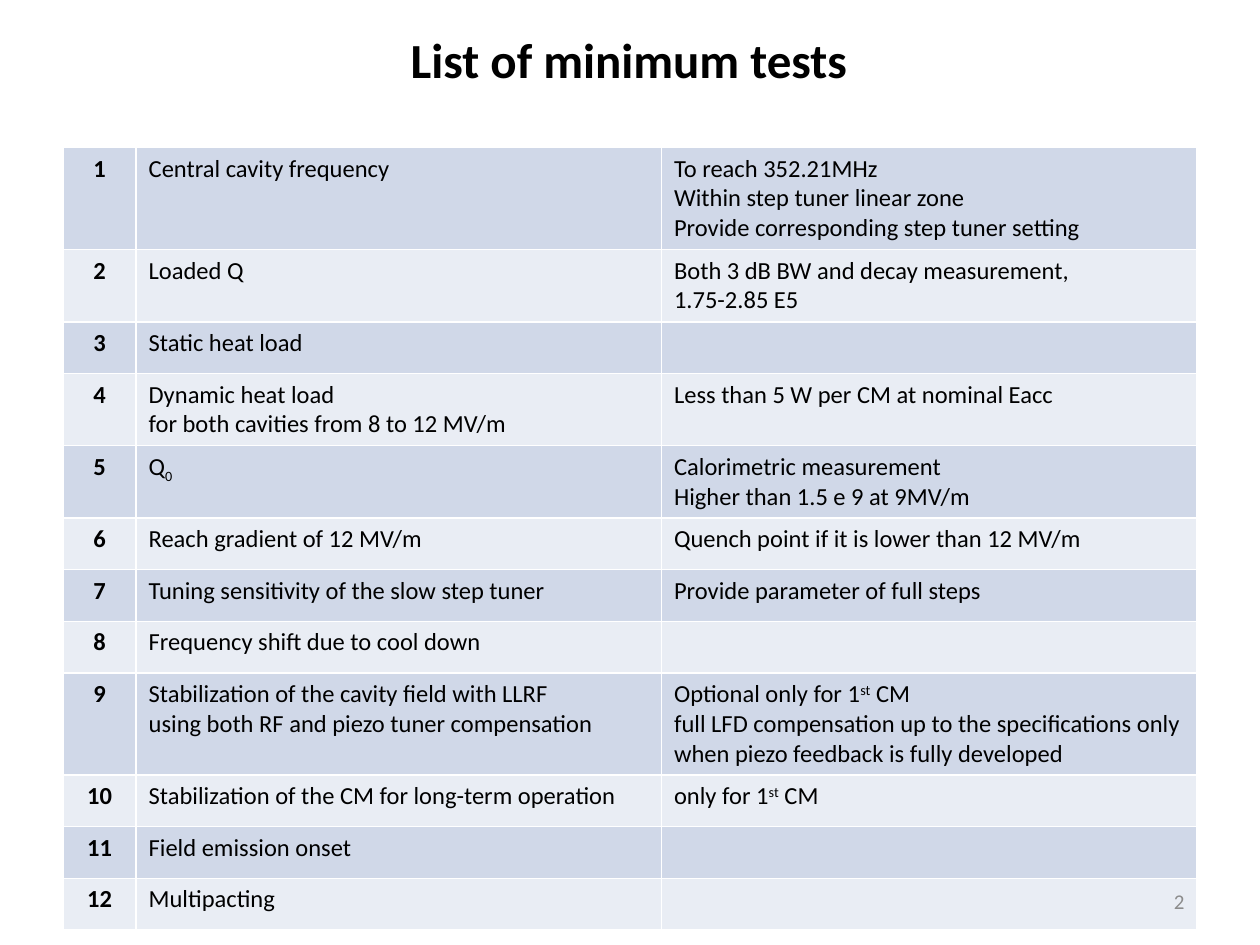
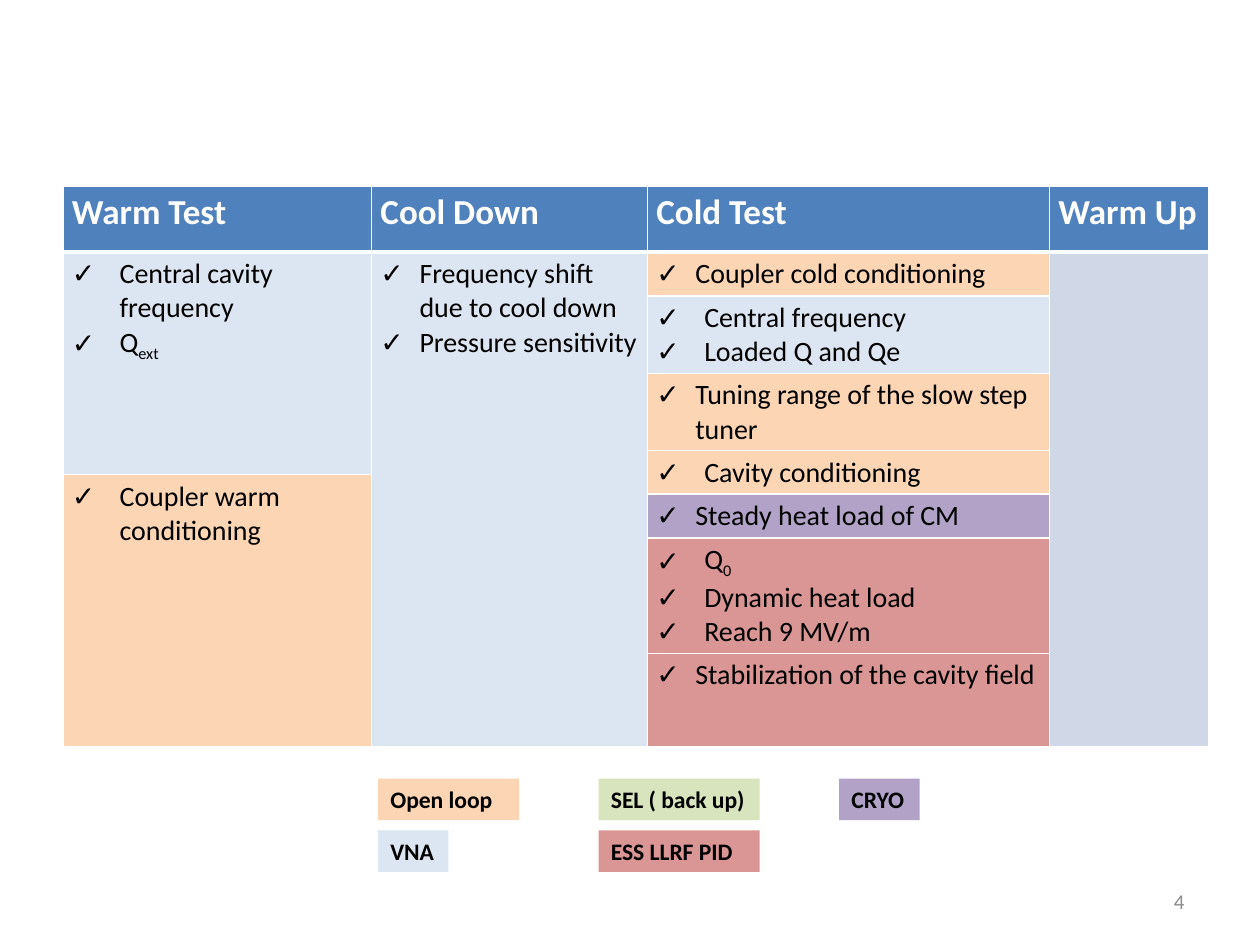
import lxml.etree as etree
import pptx
import pptx.dml.color
import pptx.enum.shapes
import pptx.enum.text
import pptx.oxml.ns
import pptx.util

Inches = pptx.util.Inches
Pt = pptx.util.Pt
RGBColor = pptx.dml.color.RGBColor
ALIGN = pptx.enum.text.PP_ALIGN
MIDDLE = pptx.enum.text.MSO_ANCHOR.MIDDLE
qn = pptx.oxml.ns.qn

BLACK = RGBColor(0x00, 0x00, 0x00)
WHITE = RGBColor(0xFF, 0xFF, 0xFF)
GREY = RGBColor(0x8C, 0x8C, 0x8C)
HEADER_BLUE = RGBColor(0x4F, 0x81, 0xBD)
BAND_DARK = RGBColor(0xD0, 0xD8, 0xE8)
BAND_LIGHT = RGBColor(0xE9, 0xED, 0xF4)
VNA_BLUE = RGBColor(0xDC, 0xE6, 0xF2)
LOOP_ORANGE = RGBColor(0xFC, 0xD5, 0xB5)
SEL_GREEN = RGBColor(0xD7, 0xE4, 0xBD)
LLRF_RED = RGBColor(0xD9, 0x96, 0x94)
CRYO_PURPLE = RGBColor(0xB3, 0xA2, 0xC7)

FONT = "Calibri"
TITLE = {"size": Pt(28), "bold": True}
NUMBER = {"size": Pt(12), "bold": False}
TEST = {"size": Pt(14), "bold": False}
TEST_ID = {"size": Pt(14), "bold": True}
PHASE = {"size": Pt(20), "bold": True}
STEP = {"size": Pt(16), "bold": False}
LEGEND = {"size": Pt(13.5), "bold": True}

SUB, SUPER = -25, 30
Q_ZERO = [("Q", 0), ("0", SUB)]
Q_EXT = [("Q", 0), ("ext", SUB)]

# Test name, then the lines of its requirement
TESTS = [
    ("Central cavity frequency",
     ["To reach 352.21MHz", "Within step tuner linear zone",
      "Provide corresponding step tuner setting"]),
    ("Loaded Q", ["Both 3 dB BW and decay measurement,", "1.75-2.85 E5"]),
    ("Static heat load", []),
    ("Dynamic heat load\nfor both cavities from 8 to 12 MV/m",
     ["Less than 5 W per CM at nominal Eacc"]),
    (Q_ZERO, ["Calorimetric measurement", "Higher than 1.5 e 9 at 9MV/m"]),
    ("Reach gradient of 12 MV/m",
     ["Quench point if it is lower than 12 MV/m"]),
    ("Tuning sensitivity of the slow step tuner",
     ["Provide parameter of full steps"]),
    ("Frequency shift due to cool down", []),
    ("Stabilization of the cavity field with LLRF \n"
     "using both RF and piezo tuner compensation",
     [[("Optional only for 1", 0), ("st", SUPER), (" CM", 0)],
      "full LFD compensation up to the specifications only "
      "when piezo feedback is fully developed"]),
    ("Stabilization of the CM for long-term operation",
     [[("only for 1", 0), ("st", SUPER), (" CM", 0)]]),
    ("Field emission onset", []),
    ("Multipacting", []),
]

PHASES = ["Warm Test", "Cool Down", "Cold Test", "Warm Up"]
NARROW, WIDE = 0.31, 0.38
# Row, column, rows spanned, fill, bullet indent, lines
STEPS = [
    (1, 0, 4, VNA_BLUE, WIDE, ["Central cavity frequency", Q_EXT]),
    (5, 0, 4, LOOP_ORANGE, WIDE, ["Coupler warm conditioning"]),
    (1, 1, 8, VNA_BLUE, NARROW,
     ["Frequency shift due to cool down", "Pressure sensitivity"]),
    (1, 2, 1, LOOP_ORANGE, NARROW, ["Coupler cold conditioning"]),
    (2, 2, 1, VNA_BLUE, WIDE, ["Central frequency", "Loaded Q and Qe"]),
    (3, 2, 1, LOOP_ORANGE, NARROW, ["Tuning range of the slow step tuner"]),
    (4, 2, 2, LOOP_ORANGE, WIDE, ["Cavity conditioning"]),
    (6, 2, 1, CRYO_PURPLE, NARROW, ["Steady heat load of CM"]),
    (7, 2, 1, LLRF_RED, WIDE, [Q_ZERO, "Dynamic heat load", "Reach 9 MV/m"]),
    (8, 2, 1, LLRF_RED, NARROW, ["Stabilization of the cavity field"]),
    (1, 3, 8, BAND_DARK, NARROW, []),
]

LEGEND_ROWS = [6.18, 6.59]
# Left, row, width, fill, label
LEGEND_KEYS = [
    (3, 0, 1.12, LOOP_ORANGE, "Open loop"),
    (3, 1, 0.56, VNA_BLUE, "VNA"),
    (4.75, 0, 1.28, SEL_GREEN, "SEL ( back up)"),
    (4.75, 1, 1.28, LLRF_RED, "ESS LLRF PID"),
    (6.66, 0, 0.64, CRYO_PURPLE, "CRYO"),
]


def add_span(para, text, style, color, baseline=0):
    """Add text to a paragraph, with a line break at each newline."""
    for index, part in enumerate(text.split("\n")):
        if index:
            para.add_line_break()
            size = str(int(style["size"].pt * 100))
            etree.SubElement(para._p[-1], qn("a:rPr"), sz=size)
        span = para.add_run()
        span.text = part
        span.font.name = FONT
        span.font.color.rgb = color
        for name, value in style.items():
            setattr(span.font, name, value)
        if baseline:
            span._r.get_or_add_rPr().set("baseline", str(baseline * 1000))


def add_tick(para, indent):
    props = para._p.get_or_add_pPr()
    props.set("marL", str(Inches(indent)))
    props.set("indent", str(-Inches(indent)))
    etree.SubElement(props, qn("a:buFont"), typeface="Arial")
    etree.SubElement(props, qn("a:buChar"), char="✓")


def write_lines(frame, lines, style, color=BLACK, align=ALIGN.LEFT, indent=0):
    """Write one paragraph a line; a line is a string or (text, baseline) pairs."""
    for index, line in enumerate(lines):
        para = frame.add_paragraph() if index else frame.paragraphs[0]
        para.alignment = align
        if indent:
            add_tick(para, indent)
        spans = [(line, 0)] if isinstance(line, str) else line
        for text, baseline in spans:
            add_span(para, text, style, color, baseline)


def add_grid(page, left, top, widths, heights):
    """Add a plain table with the given column widths and row heights."""
    frame = page.shapes.add_table(
        len(heights), len(widths), Inches(left), Inches(top),
        Inches(sum(widths)), Inches(sum(heights)))
    table = frame.table
    table.first_row = table.horz_banding = False
    for column, width in zip(table.columns, widths):
        column.width = Inches(width)
    for row, height in zip(table.rows, heights):
        row.height = Inches(height)
    return table


def paint_cell(cell, fill, bottom=1):
    """Give a cell white borders, the lowest one `bottom` points wide, and a fill."""
    props = cell._tc.get_or_add_tcPr()
    for side, width in {"L": 1, "R": 1, "T": 1, "B": bottom}.items():
        border = etree.SubElement(props, qn(f"a:ln{side}"), w=str(Pt(width)))
        solid = etree.SubElement(border, qn("a:solidFill"))
        etree.SubElement(solid, qn("a:srgbClr"), val=str(WHITE))
    cell.fill.solid()
    cell.fill.fore_color.rgb = fill


def set_phase_margins(cell):
    for side, size in {"left": 0.07, "right": 0.07,
                       "top": 0.04, "bottom": 0.04}.items():
        setattr(cell, f"margin_{side}", Inches(size))


def add_page_number(page, number):
    box = page.shapes.add_textbox(
        Inches(7.17), Inches(6.95), Inches(2.33), Inches(0.4))
    box.text_frame.word_wrap = True
    box.text_frame.vertical_anchor = MIDDLE
    write_lines(box.text_frame, [str(number)], NUMBER, GREY, ALIGN.RIGHT)


def add_title(page, text):
    title = page.shapes.title
    for name, value in {"left": 0.49, "top": 0.08,
                        "width": 9, "height": 0.78}.items():
        setattr(title, name, Inches(value))
    title.text_frame.vertical_anchor = MIDDLE
    write_lines(title.text_frame, [text], TITLE, align=ALIGN.CENTER)


def add_tests_table(page):
    table = add_grid(page, 0.5, 1.17, [0.58, 4.17, 4.25], [0.41] * len(TESTS))
    for row, (test, requirement) in enumerate(TESTS):
        cells = [table.cell(row, column) for column in range(3)]
        for cell in cells:
            paint_cell(cell, BAND_LIGHT if row % 2 else BAND_DARK)
        write_lines(cells[0].text_frame, [str(row + 1)], TEST_ID,
                    align=ALIGN.CENTER)
        write_lines(cells[1].text_frame, [test], TEST)
        write_lines(cells[2].text_frame, requirement, TEST)


def add_phases_table(page):
    table = add_grid(page, 0.5, 1.48, [2.45, 2.19, 3.19, 1.26],
                     [0.52, 0.35, 0.61, 0.6, 0.19, 0.15, 0.34, 0.91, 0.74])
    for column, phase in enumerate(PHASES):
        cell = table.cell(0, column)
        set_phase_margins(cell)
        paint_cell(cell, HEADER_BLUE, bottom=3)
        write_lines(cell.text_frame, [phase], PHASE, WHITE)
    for row, column, rows, fill, indent, lines in STEPS:
        cell = table.cell(row, column)
        if rows > 1:
            cell.merge(table.cell(row + rows - 1, column))
        for covered in range(row, row + rows):
            set_phase_margins(table.cell(covered, column))
            paint_cell(table.cell(covered, column), fill)
        write_lines(cell.text_frame, lines, STEP, indent=indent)


def add_legend_key(page, left, row, width, fill, label):
    key = page.shapes.add_shape(
        pptx.enum.shapes.MSO_SHAPE.RECTANGLE, Inches(left),
        Inches(LEGEND_ROWS[row]), Inches(width), Inches(0.33))
    key.shadow.inherit = False
    key.fill.solid()
    key.fill.fore_color.rgb = fill
    key.line.fill.background()
    key.text_frame.word_wrap = True
    key.text_frame.margin_right = 0
    write_lines(key.text_frame, [label], LEGEND)


def main():
    deck = pptx.Presentation()
    deck.slide_width, deck.slide_height = Inches(10), Inches(7.5)
    title_only, blank = deck.slide_layouts[5], deck.slide_layouts[6]

    tests_page = deck.slides.add_slide(title_only)
    add_title(tests_page, "List of minimum tests")
    add_tests_table(tests_page)
    add_page_number(tests_page, 2)

    phases_page = deck.slides.add_slide(blank)
    add_phases_table(phases_page)
    for key in LEGEND_KEYS:
        add_legend_key(phases_page, *key)
    add_page_number(phases_page, 4)

    deck.save("out.pptx")


if __name__ == "__main__":
    main()
